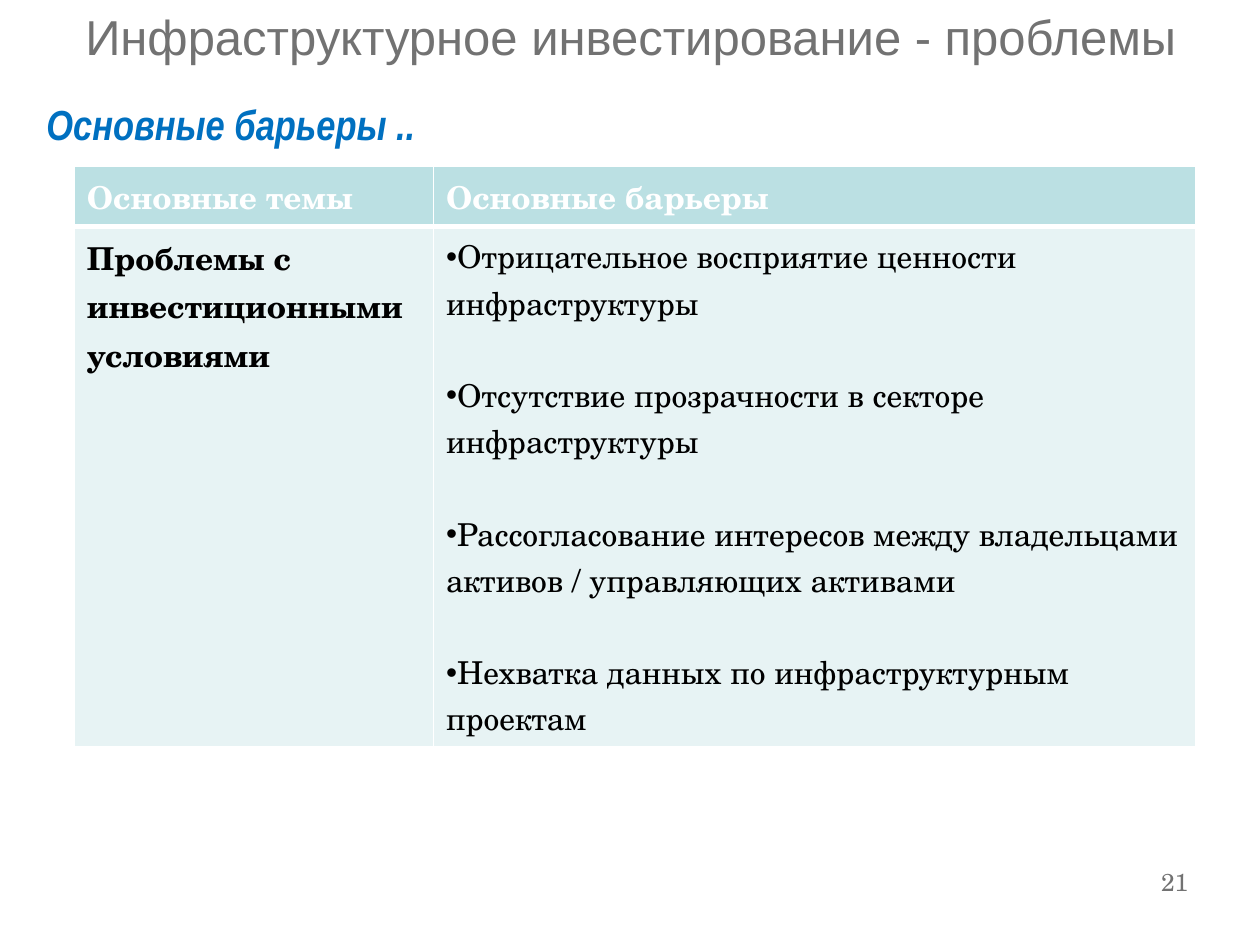
from lxml.etree import SubElement
from pptx import Presentation
from pptx.dml.color import RGBColor
from pptx.enum.text import MSO_ANCHOR, PP_ALIGN
from pptx.oxml.ns import qn
from pptx.util import Inches, Pt

COLORS = {
    "gray": "727272",
    "blue": "0070C0",
    "white": "FFFFFF",
    "black": "000000",
    "header": "BBE0E3",
    "body": "E7F3F4",
}
SERIF = "TeX Gyre Schola"


def add_run(paragraph, text, font_name, size, color, bold=False, italic=False):
    run = paragraph.add_run()
    run.text = text
    run.font.name = font_name
    run.font.size = Pt(size)
    run.font.bold = bold
    run.font.italic = italic
    run.font.color.rgb = RGBColor.from_string(COLORS[color])


def style_cell(cell, fill, top_width, bottom_width):
    properties = cell._tc.get_or_add_tcPr()
    widths = {"a:lnL": 1, "a:lnR": 1, "a:lnT": top_width, "a:lnB": bottom_width}
    for tag, width in widths.items():
        line = SubElement(properties, qn(tag), w=str(Pt(width)))
        line_fill = SubElement(line, qn("a:solidFill"))
        SubElement(line_fill, qn("a:srgbClr"), val=COLORS["white"])
    cell.fill.solid()
    cell.fill.fore_color.rgb = RGBColor.from_string(COLORS[fill])


presentation = Presentation()
presentation.slide_width = Inches(10)
presentation.slide_height = Inches(7.5)
slide = presentation.slides.add_slide(presentation.slide_layouts[5])

title = slide.shapes.title
title.left, title.top = Inches(0.51), Inches(0)
title.width, title.height = Inches(8.99), Inches(0.71)
title.text_frame.vertical_anchor = MSO_ANCHOR.MIDDLE
title.text_frame.margin_bottom = Inches(0.19)
title_paragraph = title.text_frame.paragraphs[0]
title_paragraph.alignment = PP_ALIGN.CENTER
add_run(title_paragraph, "Инфраструктурное инвестирование - проблемы", "Arial", 28, "gray")

page_number = slide.shapes.add_textbox(Inches(8.31), Inches(6.83), Inches(1.22), Inches(0.52))
page_number.text_frame.word_wrap = True
page_paragraph = page_number.text_frame.paragraphs[0]
page_paragraph.alignment = PP_ALIGN.RIGHT
add_run(page_paragraph, "21", SERIF, 14, "gray")

table = slide.shapes.add_table(
    2, 2, Inches(0.59), Inches(1.32), Inches(8.9), Inches(4.61)
).table
for column, width in zip(table.columns, (2.85, 6.05)):
    column.width = Inches(width)
for row, height in zip(table.rows, (0.48, 4.13)):
    row.height = Inches(height)

for index, heading in enumerate(("Основные темы", "Основные барьеры")):
    header_cell = table.cell(0, index)
    style_cell(header_cell, "header", 1, 3)
    style_cell(table.cell(1, index), "body", 3, 1)
    add_run(header_cell.text_frame.paragraphs[0], heading, SERIF, 18, "white", bold=True)

topic_paragraph = table.cell(1, 0).text_frame.paragraphs[0]
add_run(topic_paragraph, "Проблемы с инвестиционными условиями", SERIF, 18, "black", bold=True)

barriers = (
    "Отрицательное восприятие ценности инфраструктуры",
    "Отсутствие прозрачности в секторе инфраструктуры",
    "Рассогласование интересов между владельцами активов / управляющих активами",
    "Нехватка данных по инфраструктурным проектам",
)
barrier_frame = table.cell(1, 1).text_frame
for index, barrier in enumerate(barriers):
    paragraph = barrier_frame.add_paragraph() if index else barrier_frame.paragraphs[0]
    if index:
        paragraph.space_before = Pt(26.4)
    paragraph_properties = paragraph._p.get_or_add_pPr()
    SubElement(paragraph_properties, qn("a:buFont"), typeface="Arial")
    SubElement(paragraph_properties, qn("a:buChar"), char="•")
    add_run(paragraph, barrier, SERIF, 18, "black")

subtitle = slide.shapes.add_textbox(Inches(0.27), Inches(0.73), Inches(8.43), Inches(0.51))
subtitle.text_frame.word_wrap = True
add_run(
    subtitle.text_frame.paragraphs[0], "Основные барьеры ..",
    "Arial Narrow", 24, "blue", bold=True, italic=True,
)

presentation.save("out.pptx")
